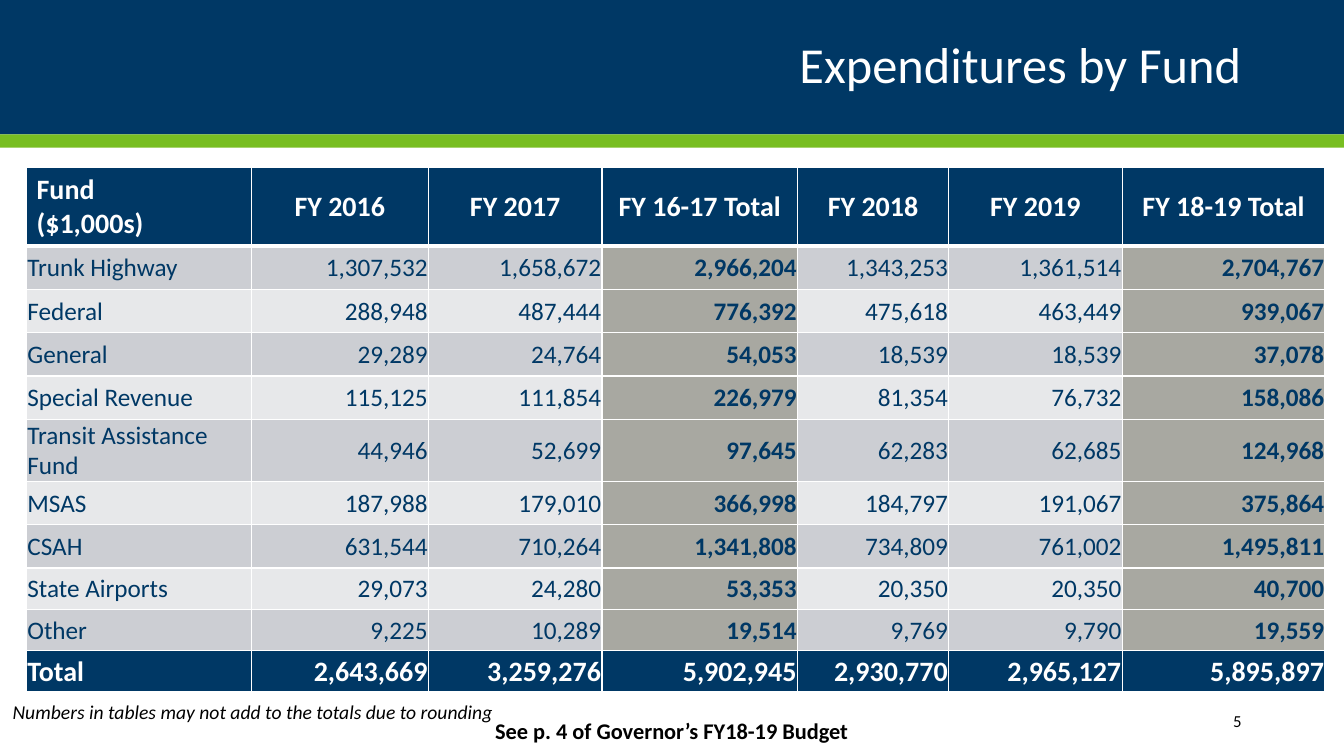
from pptx import Presentation
from pptx.dml.color import RGBColor as Rgb
from pptx.enum.shapes import MSO_SHAPE as Shape
from pptx.enum.text import MSO_ANCHOR as Anchor, PP_ALIGN as Align
from pptx.oxml import parse_xml
from pptx.oxml.ns import nsdecls
from pptx.util import Cm, Pt


class Theme:
    navy = Rgb.from_string("003865")
    green = Rgb.from_string("78BE21")
    white = Rgb.from_string("FFFFFF")
    black = Rgb.from_string("000000")
    bands = Rgb.from_string("CCCED3"), Rgb.from_string("E7E8EA")
    sum = Rgb.from_string("A8A8A1")
    title = {"name": "Calibri", "size": Pt(36), "bold": False}
    head = {"name": "Calibri", "size": Pt(20), "bold": True}
    cell = {"name": "Calibri", "size": Pt(18), "bold": False}
    total = {**cell, "bold": True}
    source = {"name": "Calibri", "size": Pt(16), "bold": True}
    note = {"name": "Calibri", "size": Pt(14), "italic": True}
    page = {"name": "Calibri", "size": Pt(12)}


def write(frame, text, align, form, color):
    frame.text = text
    frame.word_wrap = True
    for para in frame.paragraphs:
        para.alignment = align
        for run in para.runs:
            run.font.color.rgb = color
            for key, value in form.items():
                setattr(run.font, key, value)


def edge(cell, low):
    props = cell._tc.get_or_add_tcPr()
    for spot, side in enumerate("LRTB"):
        width = Pt(low if side == "B" else 1)
        props.insert(spot, parse_xml(
            f'<a:ln{side} {nsdecls("a")} w="{width}"><a:solidFill>'
            f'<a:srgbClr val="{Theme.white}"/></a:solidFill></a:ln{side}>'))


deck = Presentation()
deck.slide_width, deck.slide_height = Cm(33.87), Cm(19.05)
slide = deck.slides.add_slide(deck.slide_layouts[5])
shapes = slide.shapes

title = shapes.title
place = {"left": Cm(2.33), "top": Cm(0.42), "width": Cm(29.21), "height": Cm(2.54)}
for key, value in place.items():
    setattr(title, key, value)
write(title.text_frame, "Expenditures by Fund", Align.RIGHT, Theme.title, Theme.white)
title.text_frame.vertical_anchor = Anchor.MIDDLE
title.text_frame.paragraphs[0].line_spacing = 0.9

for top, height, color in ((0, 3.39, Theme.navy), (3.39, 0.33, Theme.green)):
    bar = shapes.add_shape(Shape.RECTANGLE, 0, Cm(top), deck.slide_width, Cm(height))
    bar.shadow.inherit = False
    bar.fill.solid()
    bar.fill.fore_color.rgb = color
    bar.line.fill.background()
    title.element.addprevious(bar.element)

rows = (
    ("Fund\n($1,000s)", "FY 2016", "FY 2017", "FY 16-17 Total", "FY 2018", "FY 2019", "FY 18-19 Total"),
    ("Trunk Highway", "1,307,532", "1,658,672", "2,966,204", "1,343,253", "1,361,514", "2,704,767"),
    ("Federal", "288,948", "487,444", "776,392", "475,618", "463,449", "939,067"),
    ("General", "29,289", "24,764", "54,053", "18,539", "18,539", "37,078"),
    ("Special Revenue", "115,125", "111,854", "226,979", "81,354", "76,732", "158,086"),
    ("Transit Assistance Fund", "44,946", "52,699", "97,645", "62,283", "62,685", "124,968"),
    ("MSAS", "187,988", "179,010", "366,998", "184,797", "191,067", "375,864"),
    ("CSAH", "631,544", "710,264", "1,341,808", "734,809", "761,002", "1,495,811"),
    ("State Airports", "29,073", "24,280", "53,353", "20,350", "20,350", "40,700"),
    ("Other", "9,225", "10,289", "19,514", "9,769", "9,790", "19,559"),
    ("Total", "2,643,669", "3,259,276", "5,902,945", "2,930,770", "2,965,127", "5,895,897"),
)
widths = 5.66, 4.47, 4.37, 4.93, 3.81, 4.37, 5.11
heights = [1.04] + [1.09] * 7 + [1.04] * 3
last = len(rows) - 1
holder = shapes.add_table(len(rows), len(widths), Cm(0.67), Cm(4.22), Cm(32.72), Cm(13.21))
table = holder.table
for column, width in zip(table.columns, widths):
    column.width = Cm(width)
for line, height in zip(table.rows, heights):
    line.height = Cm(height)
holder.height = Cm(13.21)

for r, row in enumerate(rows):
    for c, text in enumerate(row):
        cell = table.cell(r, c)
        sums = c in (3, 6)
        if r in (0, last):
            fill, form, color = Theme.navy, Theme.head, Theme.white
        else:
            fill = Theme.sum if sums else Theme.bands[(r - 1) % 2]
            form, color = Theme.total if sums else Theme.cell, Theme.navy
        align = Align.LEFT if c == 0 else Align.RIGHT if r else Align.CENTER
        write(cell.text_frame, text, align, form, color)
        cell.vertical_anchor = Anchor.MIDDLE
        if r:
            cell.margin_left = cell.margin_right = cell.margin_top = Cm(0.02)
            cell.margin_bottom = 0
        cell.fill.solid()
        cell.fill.fore_color.rgb = fill
        edge(cell, 1 if r else 3)

labels = (
    ("5", (27.48, 17.65, 4.06, 1.02), Align.RIGHT, Theme.page),
    ("See p. 4 of Governor’s FY18-19 Budget", (9.17, 17.91, 15.52, 1.02), Align.CENTER, Theme.source),
    ("Numbers in tables may not add to the totals due to rounding", (0.05, 17.53, 12.65, 0.79),
     Align.CENTER, Theme.note),
)
for text, box, align, form in labels:
    label = shapes.add_textbox(*map(Cm, box))
    write(label.text_frame, text, align, form, Theme.black)
    label.text_frame.vertical_anchor = Anchor.MIDDLE

deck.save("out.pptx")
